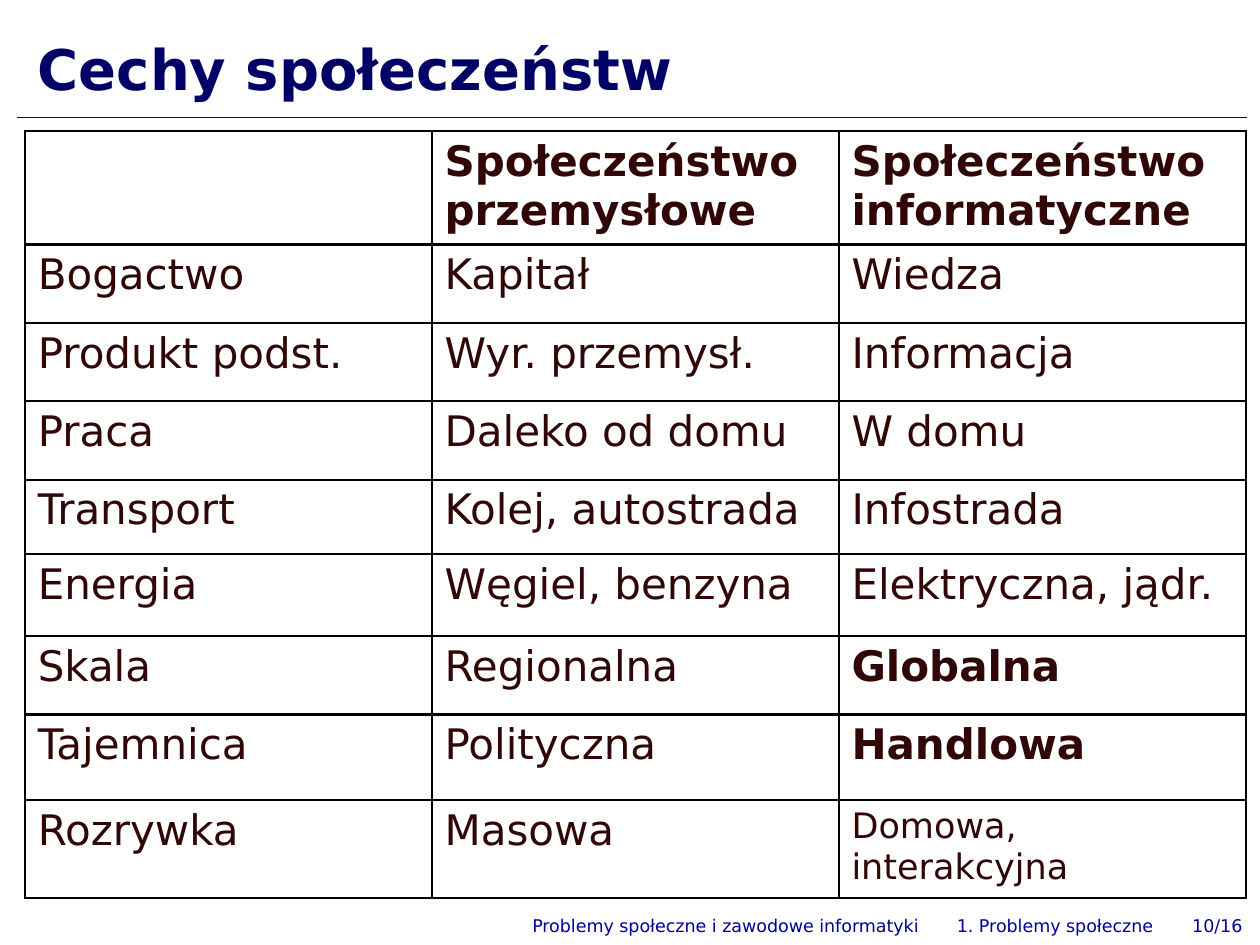
"""Build the slide comparing features of industrial and information societies."""
from dataclasses import dataclass

from lxml import etree
from pptx import Presentation
from pptx.dml.color import RGBColor
from pptx.enum.shapes import MSO_CONNECTOR
from pptx.enum.text import MSO_ANCHOR, PP_ALIGN
from pptx.oxml.ns import qn
from pptx.util import Pt

STRAIGHT = MSO_CONNECTOR.STRAIGHT
BOTTOM, MIDDLE = MSO_ANCHOR.BOTTOM, MSO_ANCHOR.MIDDLE
LEFT, RIGHT = PP_ALIGN.LEFT, PP_ALIGN.RIGHT
TITLE_ONLY = 5
FONT = "DejaVu Sans"
COLORS = {"title": "000066", "accent": "000099", "text": "300606", "border": "010000"}
BORDER_SIDES = ("a:lnL", "a:lnR", "a:lnT", "a:lnB")
COLUMN_WIDTH = 232.5


@dataclass(frozen=True)
class CellText:
    text: str
    bold: bool = False
    size: float = 24


@dataclass(frozen=True)
class TableRow:
    height: float
    cells: tuple[CellText, ...]


@dataclass(frozen=True)
class FooterPart:
    text: str
    left: float
    right: float


ROWS = (
    TableRow(64.8, (CellText(""), CellText("Społeczeństwo przemysłowe", True),
                    CellText("Społeczeństwo informatyczne", True))),
    TableRow(44.8, (CellText("Bogactwo"), CellText("Kapitał"), CellText("Wiedza"))),
    TableRow(44.8, (CellText("Produkt podst."), CellText("Wyr. przemysł."),
                    CellText("Informacja"))),
    TableRow(44.8, (CellText("Praca"), CellText("Daleko od domu"), CellText("W domu"))),
    TableRow(42.6, (CellText("Transport"), CellText("Kolej, autostrada"),
                    CellText("Infostrada"))),
    TableRow(46.8, (CellText("Energia"), CellText("Węgiel, benzyna"),
                    CellText("Elektryczna, jądr."))),
    TableRow(44.8, (CellText("Skala"), CellText("Regionalna"), CellText("Globalna", True))),
    TableRow(49, (CellText("Tajemnica"), CellText("Polityczna"), CellText("Handlowa", True))),
    TableRow(56, (CellText("Rozrywka"), CellText("Masowa"),
                  CellText("Domowa, interakcyjna", size=20))),
)
FOOTER = (
    FooterPart("Problemy społeczne i zawodowe informatyki", 280, 532),
    FooterPart("1. Problemy społeczne", 534, 666),
    FooterPart("10/16", 668, 717),
)


def add_run(paragraph, text: str, size: float, color: str, bold: bool = False) -> None:
    """Add one formatted run to a paragraph."""
    run = paragraph.add_run()
    run.text = text
    run.font.name = FONT
    run.font.size = Pt(size)
    run.font.bold = bold
    run.font.color.rgb = RGBColor.from_string(COLORS[color])


def set_margins(frame) -> None:
    """Give a text frame or cell the common insets."""
    frame.margin_left = frame.margin_right = Pt(7.2)
    frame.margin_top = frame.margin_bottom = Pt(3.6)


def add_title(slide, text: str) -> None:
    """Place and fill the title placeholder."""
    title = slide.shapes.title
    title.left, title.top, title.width, title.height = Pt(14.4), Pt(9.4), Pt(697.7), Pt(51.1)
    frame = title.text_frame
    frame.word_wrap = True
    frame.vertical_anchor = BOTTOM
    set_margins(frame)
    paragraph = frame.paragraphs[0]
    paragraph.alignment = LEFT
    paragraph.line_spacing = 0.7
    add_run(paragraph, text, 32, "title", True)


def add_rule(slide) -> None:
    """Draw the line under the title."""
    rule = slide.shapes.add_connector(STRAIGHT, Pt(10), Pt(67), Pt(712.8), Pt(67))
    rule.line.width = Pt(0.75)
    rule.line.color.rgb = RGBColor.from_string(COLORS["accent"])
    etree.SubElement(rule.element.spPr, qn("a:effectLst"))


def add_borders(cell) -> None:
    """Outline all four sides of a cell."""
    properties = cell._tc.get_or_add_tcPr()
    for side in BORDER_SIDES:
        line = etree.SubElement(properties, qn(side), w=str(Pt(1.5)))
        fill = etree.SubElement(line, qn("a:solidFill"))
        etree.SubElement(fill, qn("a:srgbClr"), val=COLORS["border"])


def add_features_table(slide, rows: tuple[TableRow, ...]) -> None:
    """Add the comparison table."""
    column_count = len(rows[0].cells)
    frame = slide.shapes.add_table(
        len(rows), column_count, Pt(14.4), Pt(74.9),
        Pt(COLUMN_WIDTH * column_count), Pt(sum(row.height for row in rows)))
    table = frame.table
    table.first_row = table.horz_banding = False
    for column in table.columns:
        column.width = Pt(COLUMN_WIDTH)
    for row_index, row in enumerate(rows):
        table.rows[row_index].height = Pt(row.height)
        for column_index, content in enumerate(row.cells):
            cell = table.cell(row_index, column_index)
            set_margins(cell)
            add_borders(cell)
            cell.fill.background()
            if content.text:
                add_run(cell.text_frame.paragraphs[0], content.text, content.size,
                        "text", content.bold)


def add_footer_part(slide, part: FooterPart) -> None:
    """Add one right-aligned footer text."""
    box = slide.shapes.add_textbox(Pt(part.left), Pt(519.8), Pt(part.right - part.left), Pt(18))
    frame = box.text_frame
    frame.word_wrap = True
    frame.vertical_anchor = MIDDLE
    set_margins(frame)
    paragraph = frame.paragraphs[0]
    paragraph.alignment = RIGHT
    add_run(paragraph, part.text, 10, "accent")


def main() -> None:
    """Build and save the presentation."""
    presentation = Presentation()
    presentation.slide_width, presentation.slide_height = Pt(720), Pt(540)
    slide = presentation.slides.add_slide(presentation.slide_layouts[TITLE_ONLY])
    add_rule(slide)
    for part in FOOTER:
        add_footer_part(slide, part)
    add_title(slide, "Cechy społeczeństw")
    add_features_table(slide, ROWS)
    presentation.save("out.pptx")


if __name__ == "__main__":
    main()
